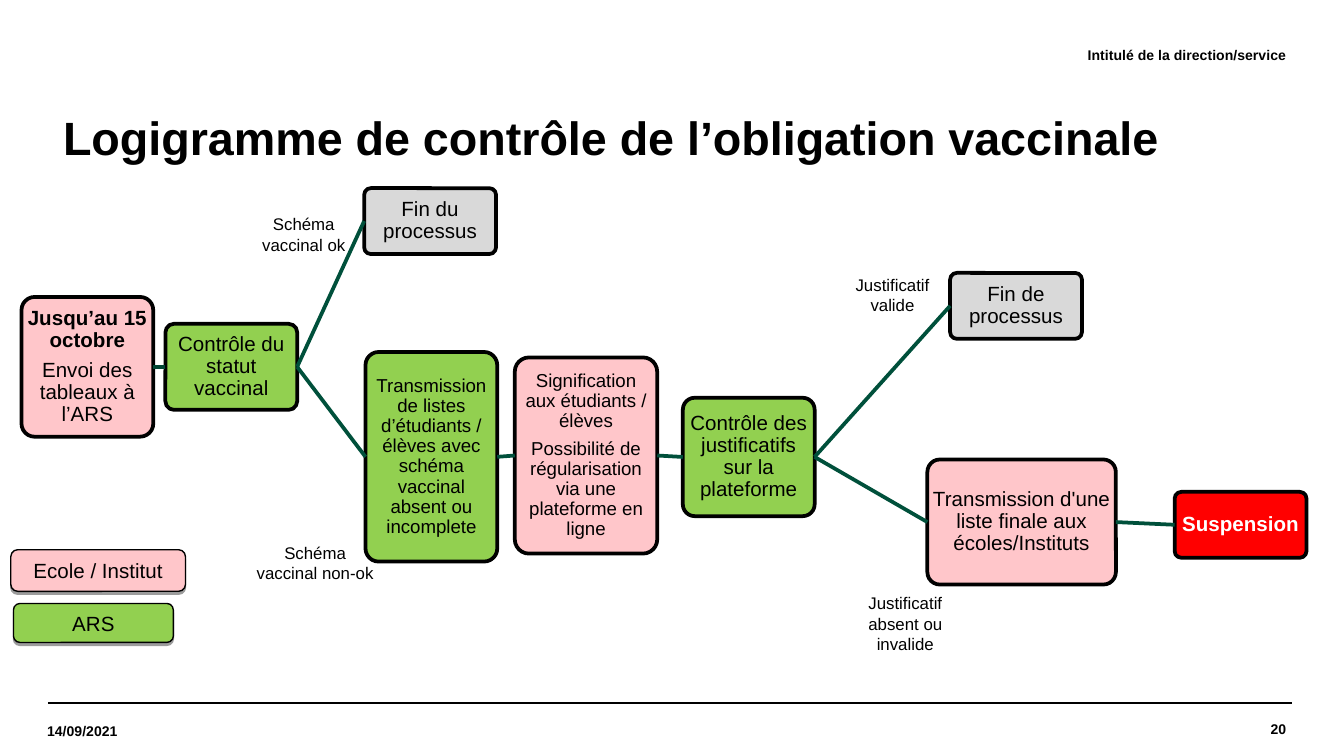
from dataclasses import dataclass

from pptx import Presentation
from pptx.dml.color import RGBColor
from pptx.enum.shapes import MSO_CONNECTOR, MSO_SHAPE
from pptx.enum.text import MSO_ANCHOR, MSO_AUTO_SIZE, PP_ALIGN
from pptx.oxml.ns import qn
from pptx.util import Pt
from lxml import etree

STRAIGHT = MSO_CONNECTOR.STRAIGHT
ROUNDED = MSO_SHAPE.ROUNDED_RECTANGLE
TOP, MIDDLE = MSO_ANCHOR.TOP, MSO_ANCHOR.MIDDLE
LEFT, CENTER, RIGHT = PP_ALIGN.LEFT, PP_ALIGN.CENTER, PP_ALIGN.RIGHT
LEFT_SITE, RIGHT_SITE = 1, 3


@dataclass(frozen=True)
class Theme:
    """Colours, font and type sizes of the slide."""
    font: str = "Arial"
    black: str = "000000"
    white: str = "FFFFFF"
    school: str = "FFC6CA"
    agency: str = "92D050"
    end: str = "D9D9D9"
    alert: str = "FF0000"
    first_link: str = "004634"
    link: str = "00503B"
    title: float = 25
    step: float = 11
    dense_step: float = 10
    label: float = 9
    small: float = 7.5


THEME = Theme()

STEPS = {
    "send": ((11.5, 159.1, 70.6, 74.9), THEME.school, THEME.step,
             [("Jusqu’au 15 octobre", True), ("Envoi des tableaux à l’ARS", False)]),
    "status": ((88.6, 173.5, 70.6, 46.1), THEME.agency, THEME.step,
               [("Contrôle du statut vaccinal", False)]),
    "end_ok": ((195.1, 100.8, 70.6, 35.3), THEME.end, THEME.step,
               [("Fin du processus", False)]),
    "lists": ((195.8, 188.6, 70.6, 112.3), THEME.agency, THEME.dense_step,
              [("Transmission de listes d’étudiants / élèves avec schéma "
                "vaccinal absent ou incomplete", False)]),
    "notice": ((275.8, 191.5, 76.3, 105.1), THEME.school, THEME.dense_step,
               [("Signification aux étudiants / élèves", False),
                ("Possibilité de régularisation via une plateforme en ligne", False)]),
    "proof": ((365.8, 213.1, 70.6, 63.4), THEME.agency, THEME.step,
              [("Contrôle des justificatifs sur la plateforme", False)]),
    "end_valid": ((509, 146.2, 70.6, 35.3), THEME.end, THEME.step,
                  [("Fin de processus", False)]),
    "final_list": ((496.8, 246.2, 101, 67), THEME.school, THEME.step,
                   [("Transmission d'une liste finale aux écoles/Instituts", False)]),
    "suspension": ((629.3, 263.5, 70.6, 35.3), THEME.alert, THEME.step,
                   [("Suspension", True)]),
}

LINKS = [
    ("send", "status", THEME.first_link),
    ("status", "end_ok", THEME.link),
    ("status", "lists", THEME.link),
    ("lists", "notice", THEME.link),
    ("notice", "proof", THEME.link),
    ("proof", "end_valid", THEME.link),
    ("proof", "final_list", THEME.link),
    ("final_list", "suspension", THEME.link),
]

LEGEND = [
    ((5.8, 294.5, 93.6, 22.3), THEME.school, "Ecole / Institut"),
    ((7.2, 323.3, 85.7, 20.9), THEME.agency, "ARS"),
]

BRANCH_LABELS = [
    ((129.6, 111.2, 66.2, 28), "Schéma vaccinal ok"),
    ((130.3, 287.3, 77, 39), "Schéma vaccinal non-ok"),
    ((445, 314.2, 79.9, 39), "Justificatif absent ou invalide"),
    ((445, 143.6, 66.2, 28), "Justificatif valide"),
]

PAGE_TEXTS = [
    ((582.5, 376.6, 106.6, 28.1), "20", RIGHT),
    ((25.2, 378, 92.2, 27.4), "14/09/2021", LEFT),
    ((226, 15.1, 463, 28.1), "Intitulé de la direction/service", RIGHT),
]


def points(values):
    """Turn plain numbers into point lengths."""
    return [Pt(value) for value in values]


def set_frame(frame, anchor, inset=None):
    """Set wrapping, anchor and, if given, one inset for all sides."""
    frame.word_wrap = True
    frame.auto_size = MSO_AUTO_SIZE.NONE
    frame.vertical_anchor = anchor
    if inset is not None:
        frame.margin_left = frame.margin_right = Pt(inset)
        frame.margin_top = frame.margin_bottom = Pt(inset)


def add_text(para, text, size, align, bold=False, color=THEME.black):
    """Add one formatted run to a paragraph."""
    para.alignment = align
    span = para.add_run()
    span.text = text
    span.font.name = THEME.font
    span.font.size = Pt(size)
    span.font.bold = bold
    span.font.color.rgb = RGBColor.from_string(color)


def add_box(page, area, fill, line_width, corner):
    """Add a filled rounded box with a black outline."""
    box = page.shapes.add_shape(ROUNDED, *points(area))
    box.adjustments[0] = corner
    box.fill.solid()
    box.fill.fore_color.rgb = RGBColor.from_string(fill)
    box.line.color.rgb = RGBColor.from_string(THEME.black)
    box.line.width = Pt(line_width)
    box.shadow.inherit = False
    return box


def add_step(page, area, fill, size, lines):
    """Add a step of the flowchart with its paragraphs."""
    box = add_box(page, area, fill, 2, 0.1)
    frame = box.text_frame
    set_frame(frame, MIDDLE, 0.5)
    color = THEME.white if fill == THEME.alert else THEME.black
    for index, (text, bold) in enumerate(lines):
        para = frame.add_paragraph() if index else frame.paragraphs[0]
        para.line_spacing = 0.9
        if index:
            para.space_before = Pt(4)
        add_text(para, text, size, CENTER, bold, color)
    return box


def add_legend_key(page, area, fill, text):
    """Add a legend key with a hard drop shadow."""
    box = add_box(page, area, fill, 0.75, 0.167)
    effects = box._element.spPr.find(qn("a:effectLst"))
    shadow = etree.SubElement(effects, qn("a:outerShdw"), blurRad="0",
                              dist=str(Pt(1.6)), dir="5400000", rotWithShape="0")
    tint = etree.SubElement(shadow, qn("a:srgbClr"), val=THEME.black)
    etree.SubElement(tint, qn("a:alpha"), val="38000")
    set_frame(box.text_frame, MIDDLE)
    add_text(box.text_frame.paragraphs[0], text, THEME.step, CENTER)


def add_line(page, ends, color, width):
    """Add a straight line without shadow."""
    line = page.shapes.add_connector(STRAIGHT, *points(ends))
    line.line.color.rgb = RGBColor.from_string(color)
    line.line.width = Pt(width)
    etree.SubElement(line._element.spPr, qn("a:effectLst"))
    return line


def add_link(page, source, target, color):
    """Join the right side of one step to the left side of another."""
    link = add_line(page, (0, 0, 0, 0), color, 2)
    link.begin_connect(source, RIGHT_SITE)
    link.end_connect(target, LEFT_SITE)


def add_label(page, area, text, size, align, anchor, inset=None, bold=False):
    """Add a text box with one paragraph."""
    box = page.shapes.add_textbox(*points(area))
    set_frame(box.text_frame, anchor, inset)
    add_text(box.text_frame.paragraphs[0], text, size, align, bold)


def set_title(page, text):
    """Place and format the title placeholder."""
    title = page.shapes.title
    title.left, title.top, title.width, title.height = points((25.2, 54, 663, 42.5))
    set_frame(title.text_frame, MIDDLE)
    title.text_frame.margin_left = Pt(8.6)
    para = title.text_frame.paragraphs[0]
    para.line_spacing = 0.9
    add_text(para, text, THEME.title, LEFT, True)


def main():
    """Build the slide and save the deck."""
    deck = Presentation()
    deck.slide_width, deck.slide_height = points((720, 405))
    page = deck.slides.add_slide(deck.slide_layouts[5])
    set_title(page, "Logigramme de contrôle de l’obligation vaccinale")
    add_line(page, (25.6, 376.6, 691.9, 376.6), THEME.black, 0.8)
    steps = {name: add_step(page, *step) for name, step in STEPS.items()}
    for source, target, color in LINKS:
        add_link(page, steps[source], steps[target], color)
    for area, text, align in PAGE_TEXTS:
        add_label(page, area, text, THEME.small, align, MIDDLE, 0, True)
    for key in LEGEND:
        add_legend_key(page, *key)
    for area, text in BRANCH_LABELS:
        add_label(page, area, text, THEME.label, CENTER, TOP)
    deck.save("out.pptx")


if __name__ == "__main__":
    main()
